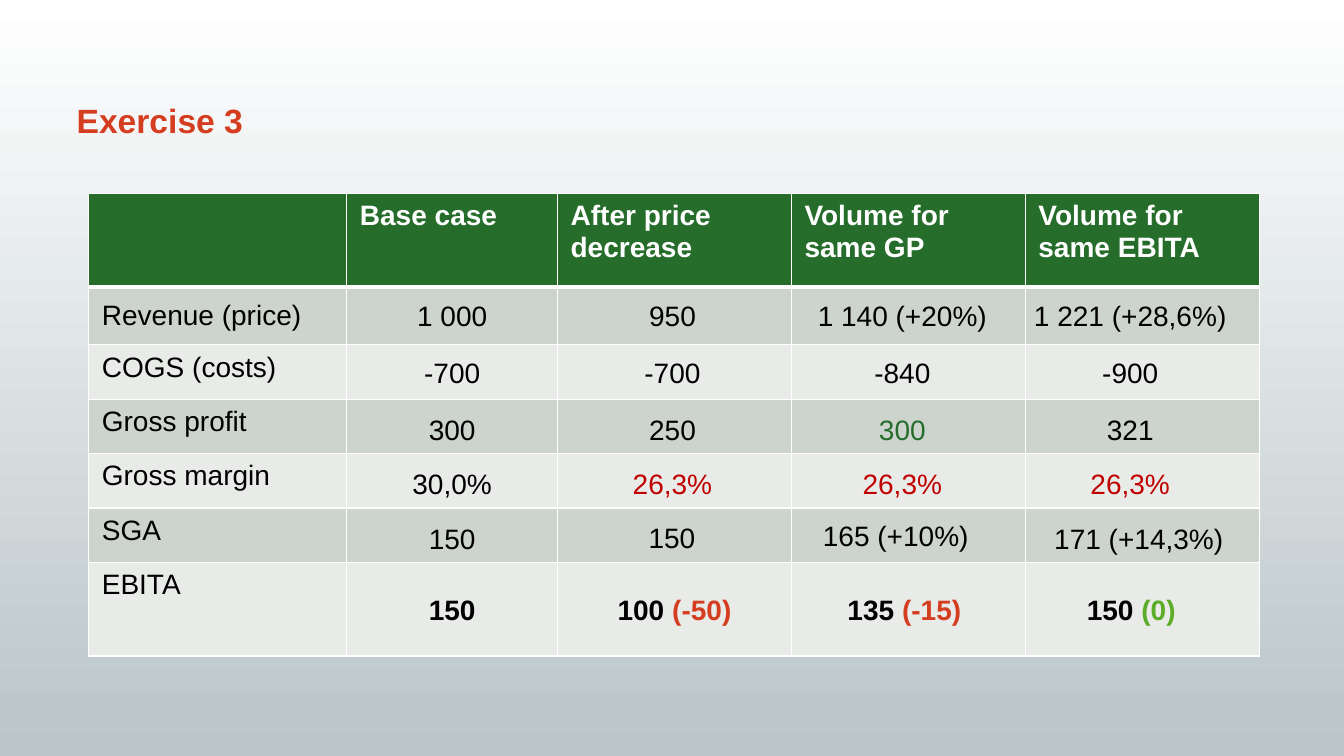
from lxml import etree
from pptx import Presentation
from pptx.dml.color import RGBColor
from pptx.enum import text
from pptx.oxml.ns import qn
from pptx.util import Inches, Pt

WHITE = RGBColor(0xFF, 0xFF, 0xFF)
BLACK = RGBColor(0, 0, 0)
MIST = RGBColor(0xB9, 0xC5, 0xC8)
GREEN = RGBColor(0x26, 0x6D, 0x2B)
LIME = RGBColor(0x5B, 0xAC, 0x26)
ORANGE = RGBColor(0xD5, 0x3D, 0x20)
RED = RGBColor(0xC0, 0, 0)
DARK_BAND = RGBColor(0xCD, 0xD4, 0xCD)
LIGHT_BAND = RGBColor(0xE8, 0xEB, 0xE8)


def write(para, words, size=20, color=BLACK, bold=False, align=text.PP_ALIGN.LEFT):
    para.alignment = align
    span = para.add_run()
    span.text = words
    span.font.name = "Arial"
    span.font.size = Pt(size)
    span.font.bold = bold
    span.font.color.rgb = color


def add_border(cell, side, points):
    line = etree.SubElement(cell._tc.get_or_add_tcPr(), qn(f"a:ln{side}"), w=str(Pt(points)))
    fill = etree.SubElement(line, qn("a:solidFill"))
    etree.SubElement(fill, qn("a:srgbClr"), val=str(WHITE))


deck = Presentation()
deck.slide_width, deck.slide_height = Inches(13.33), Inches(7.5)
page = deck.slides.add_slide(deck.slide_layouts[5])

# Background, white at the top
backdrop = page.background.fill
backdrop.gradient()
backdrop.gradient_angle = 90
for stop, color, position in zip(backdrop.gradient_stops, (MIST, WHITE), (0, 1)):
    stop.color.rgb = color
    stop.position = position

# Title
title = page.shapes.title
title.left, title.top = Inches(0.66), Inches(0.94)
title.width, title.height = Inches(12.02), Inches(0.91)
title.text_frame.vertical_anchor = text.MSO_ANCHOR.TOP
write(title.text_frame.paragraphs[0], "Exercise 3", size=24, color=ORANGE, bold=True)

# Table with headings and row labels
headings = ["", "Base case", "After price decrease", "Volume for same GP",
            "Volume for same EBITA"]
labels = ["", "Revenue (price)", "COGS (costs)", "Gross profit", "Gross margin",
          "SGA", "EBITA"]
table = page.shapes.add_table(len(labels), len(headings), Inches(0.88), Inches(1.92),
                              Inches(11.61), Inches(4.6)).table
for column, width in zip(table.columns, [2.56, 2.09, 2.32, 2.32, 2.32]):
    column.width = Inches(width)
for row, height in zip(table.rows, [0.93, 0.57, 0.54, 0.54, 0.54, 0.54, 0.93]):
    row.height = Inches(height)

for r, label in enumerate(labels):
    for c, heading in enumerate(headings):
        cell = table.cell(r, c)
        cell.margin_left = cell.margin_right = Inches(0.13)
        cell.margin_top = cell.margin_bottom = Inches(0.07)
        for side in "LRTB":
            under_header = (r, side) in [(0, "B"), (1, "T")]
            add_border(cell, side, 3 if under_header else 1)
        cell.fill.solid()
        cell.fill.fore_color.rgb = GREEN if r == 0 else DARK_BAND if r % 2 else LIGHT_BAND
        words = heading if r == 0 else label if c == 0 else ""
        if words:
            write(cell.text_frame.paragraphs[0], words,
                  color=WHITE if r == 0 else BLACK, bold=r == 0)
table.cell(1, 0).vertical_anchor = text.MSO_ANCHOR.MIDDLE

# Figures laid over the table: tops, lefts, widths, then (words, color) spans
COLUMN_LEFTS = [3.43, 5.53, 7.81, 10.07]
COLUMN_WIDTHS = [2.11, 2.28, 2.28, 2.28]
figure_rows = [
    ([2.91] * 4, COLUMN_LEFTS, COLUMN_WIDTHS,
     [[("1 000", BLACK)], [("950", BLACK)], [("1 140 (+20%)", BLACK)],
      [("1 221 (+28,6%)", BLACK)]]),
    ([3.48] * 4, COLUMN_LEFTS, COLUMN_WIDTHS,
     [[("-700", BLACK)], [("-700", BLACK)], [("-840", BLACK)], [("-900", BLACK)]]),
    ([4.04] * 4, COLUMN_LEFTS, COLUMN_WIDTHS,
     [[("300", BLACK)], [("250", BLACK)], [("300", GREEN)], [("321", BLACK)]]),
    ([4.58] * 4, COLUMN_LEFTS, COLUMN_WIDTHS,
     [[("30,0%", BLACK)], [("26,3%", RED)], [("26,3%", RED)], [("26,3%", RED)]]),
    ([5.12, 5.11, 5.09, 5.12], [3.43, 5.61, 7.83, 10.24], [2.11] * 4,
     [[("150", BLACK)], [("150", BLACK)], [("165 (+10%)", BLACK)],
      [("171 (+14,3%)", BLACK)]]),
    ([5.83] * 4, [3.43, 5.55, 7.83, 10.08], COLUMN_WIDTHS,
     [[("150", BLACK)], [("100", BLACK), (" (-50)", ORANGE)],
      [("135", BLACK), (" (-15)", ORANGE)], [("150", BLACK), (" (0)", LIME)]]),
]
for label, figure_row in zip(labels[1:], figure_rows):
    for top, left, width, figure in zip(*figure_row):
        box = page.shapes.add_textbox(Inches(left), Inches(top), Inches(width), Inches(0.44))
        box.text_frame.word_wrap = True
        box.text_frame.auto_size = text.MSO_AUTO_SIZE.SHAPE_TO_FIT_TEXT
        for words, color in figure:
            write(box.text_frame.paragraphs[0], words, color=color,
                  bold=label == "EBITA", align=text.PP_ALIGN.CENTER)

deck.save("out.pptx")
